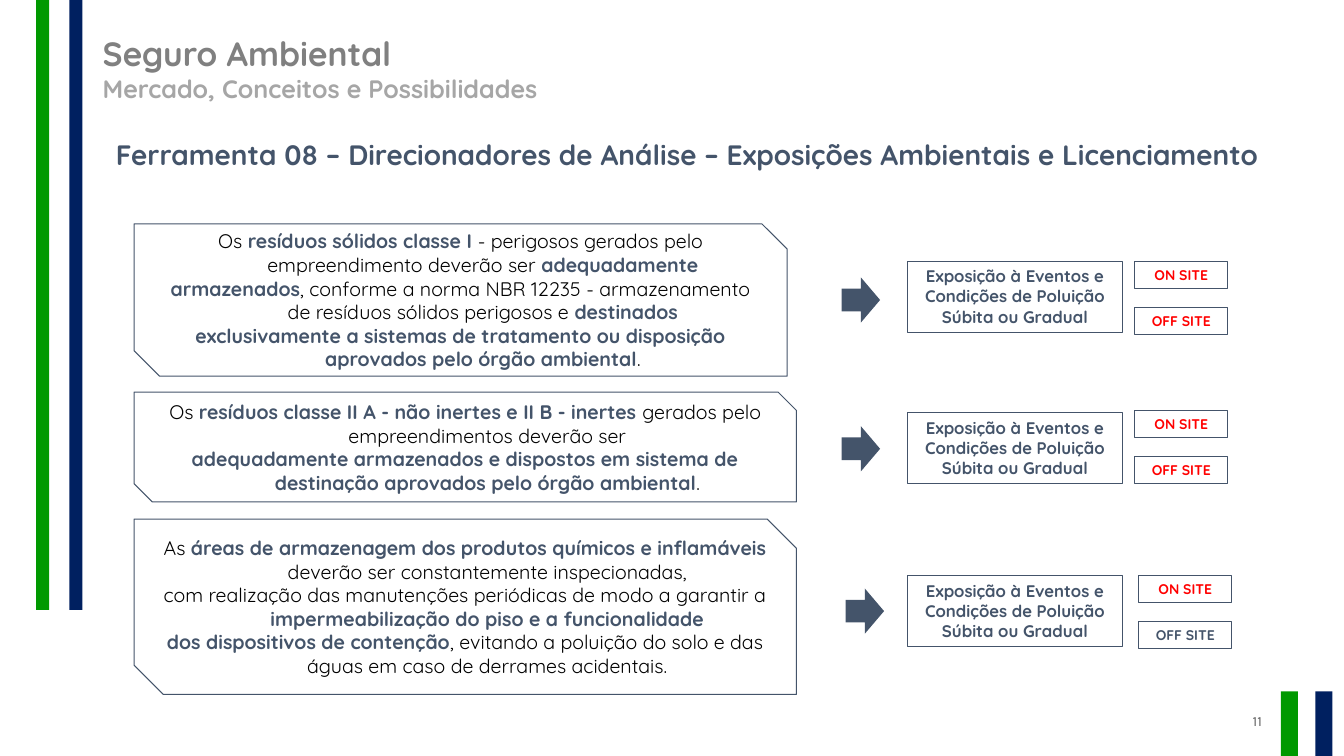
"""Build the slide on environmental insurance, exposures and licensing."""
from pptx import Presentation
from pptx import util as u
from pptx.dml.color import RGBColor
from pptx.enum import shapes, text

GREEN, NAVY, SLATE, RED, BLACK = "009900", "002060", "44546A", "FF0000", "000000"
FONT = "Quicksand"
KIND = shapes.MSO_SHAPE
ALIGN = text.PP_ALIGN
ANCHOR = text.MSO_ANCHOR

BARS = [
    (0.91, 0, 0.33, 15.37, GREEN),
    (1.75, 0, 0.33, 15.37, NAVY),
    (32.28, 17.42, 0.43, 1.63, GREEN),
    (33.15, 17.42, 0.43, 1.63, NAVY),
]
HEAD = [("Seguro Ambiental", 24, "808080"),
        ("Mercado, Conceitos e Possibilidades", 18, "A6A6A6")]
TITLE = "Ferramenta 08 – Direcionadores de Análise – Exposições Ambientais e Licenciamento"
RISK = "Exposição à Eventos e Condições de Poluição Súbita ou Gradual"
ROWS = [
    dict(card=(5.64, 16.46, 3.84), arrow=6.99, risk=6.58, tags=6.58, shift=0, off=RED, body=[
        "Os *resíduos sólidos classe I *- perigosos gerados pelo empreendimento deverão ser *adequadamente*",
        "*armazenados*, conforme a norma NBR 12235 - armazenamento de resíduos sólidos perigosos e *destinados*",
        "*exclusivamente a sistemas de tratamento ou disposição aprovados pelo órgão ambiental*."]),
    dict(card=(9.88, 16.69, 2.77), arrow=10.74, risk=10.39, tags=10.34, shift=0, off=RED, body=[
        "Os *resíduos classe II A - não inertes e II B - inertes* gerados pelo empreendimentos deverão ser",
        "*adequadamente armazenados e dispostos em sistema de destinação aprovados pelo órgão ambiental*."]),
    dict(card=(13.08, 16.69, 4.42), arrow=14.83, risk=14.5, tags=14.5, shift=0.1, off=SLATE, body=[
        "As *áreas de armazenagem dos produtos químicos e inflamáveis *deverão ser constantemente inspecionadas,",
        "com realização das manutenções periódicas de modo a garantir a *impermeabilização do piso e a funcionalidade*",
        "*dos dispositivos de contenção*, evitando a poluição do solo e das águas em caso de derrames acidentais."]),
]
INDENT = u.Cm(1.12)
STEP = 1.16

deck = Presentation()
deck.slide_width, deck.slide_height = u.Cm(33.87), u.Cm(19.05)
slide = deck.slides.add_slide(deck.slide_layouts[6])


def tint(part, code):
    part.rgb = RGBColor.from_string(code)


def draw(kind, x, y, w, h, fill=None):
    shape = slide.shapes.add_shape(kind, u.Cm(x), u.Cm(y), u.Cm(w), u.Cm(h))
    shape.shadow.inherit = False
    if fill:
        shape.fill.solid()
        tint(shape.fill.fore_color, fill)
        shape.line.fill.background()
    else:
        shape.fill.background()
        tint(shape.line.color, SLATE)
        shape.line.width = u.Pt(0.75)
    return shape


def label(x, y, w, h):
    return slide.shapes.add_textbox(u.Cm(x), u.Cm(y), u.Cm(w), u.Cm(h))


def write(shape, lines, align=ALIGN.LEFT, anchor=ANCHOR.TOP, grow=True, indent=0):
    frame = shape.text_frame
    frame.word_wrap = True
    frame.vertical_anchor = anchor
    if grow:
        frame.auto_size = text.MSO_AUTO_SIZE.SHAPE_TO_FIT_TEXT
    for i, runs in enumerate(lines):
        para = frame.add_paragraph() if i else frame.paragraphs[0]
        para.alignment = align
        if indent:
            props = para._p.get_or_add_pPr()
            props.set("marL", str(indent))
            props.set("indent", str(-indent))
        for words, size, code, bold, face in runs:
            run = para.add_run()
            run.text = words
            run.font.size, run.font.bold, run.font.name = u.Pt(size), bold, face
            tint(run.font.color, code)


def mark(line):
    return [(part, 14, SLATE if i % 2 else BLACK, bool(i % 2), FONT)
            for i, part in enumerate(line.split("*")) if part]


def bold(words, size, code):
    return [(words, size, code, True, FONT)]


for bar in BARS:
    draw(KIND.RECTANGLE, *bar)
write(label(24.43, 17.65, 7.62, 1.02), [[("11", 10, "595959", False, "Karla")]],
      ALIGN.RIGHT, ANCHOR.MIDDLE, grow=False)
write(label(2.34, 0.71, 24.87, 2.06), [bold(*line) for line in HEAD])
write(label(2.67, 3.33, 30.28, 1.12), [bold(TITLE, 20, SLATE)])

for row in ROWS:
    card = draw(KIND.SNIP_2_DIAG_RECTANGLE, 3.38, *row["card"])
    write(card, [mark(line) for line in row["body"]],
          ALIGN.CENTER, ANCHOR.MIDDLE, grow=False, indent=INDENT)
    draw(KIND.RIGHT_ARROW, 21.21 + row["shift"], row["arrow"], 0.97, 1.14, SLATE)
    risk = draw(KIND.RECTANGLE, 22.86, row["risk"], 5.44, 1.8)
    write(risk, [bold(RISK, 12, SLATE)], ALIGN.CENTER)
    for i, (name, code) in enumerate([("ON SITE", RED), ("OFF SITE", row["off"])]):
        tag = draw(KIND.RECTANGLE, 28.6 + row["shift"], row["tags"] + i * STEP, 2.34, 0.69)
        write(tag, [bold(name, 10, code)], ALIGN.CENTER)

deck.save("out.pptx")
